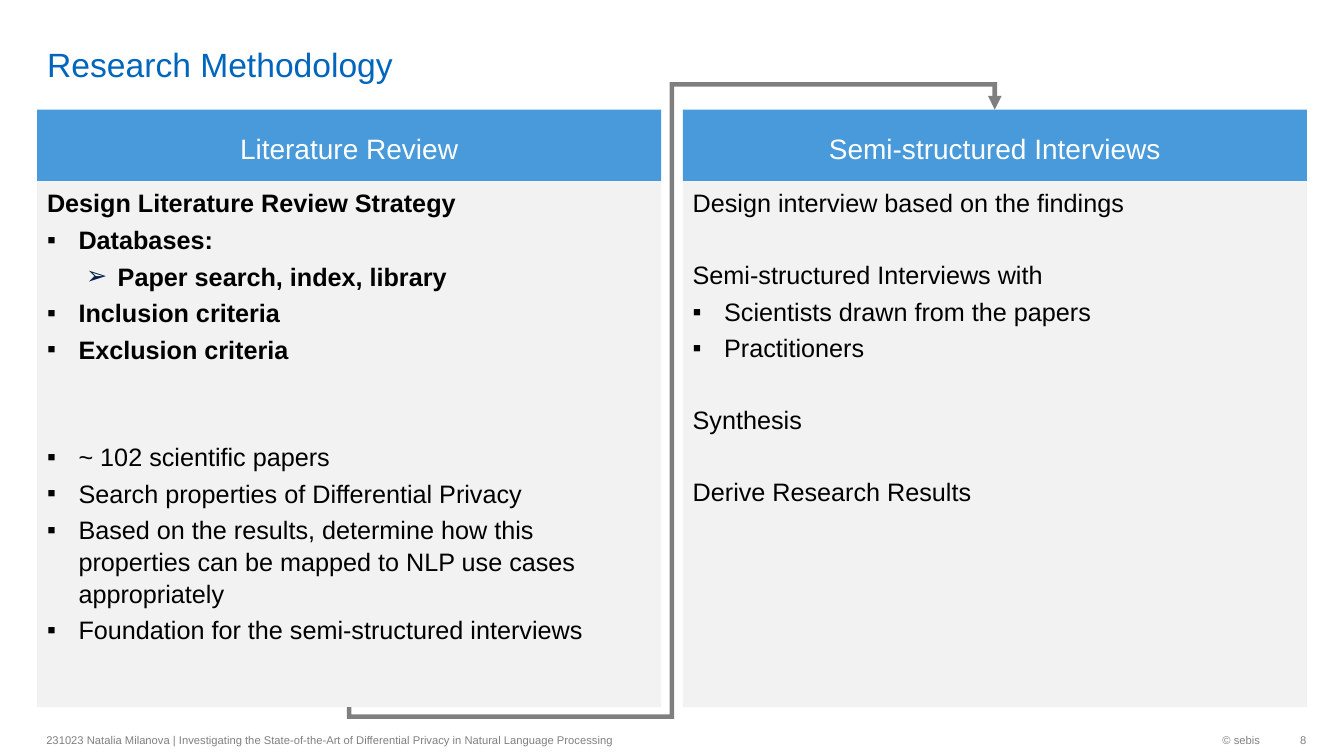
from lxml import etree
from pptx import Presentation
from pptx import util as u
from pptx.dml.color import RGBColor
from pptx.enum import shapes, text
from pptx.oxml.ns import qn

COLORS = {"title": "0065BD", "header": "489ADA", "panel": "F2F2F2", "text": "000000",
          "header text": "FFFFFF", "footer": "808080", "arrow bullet": "002143", "flow": "000000"}
LEFT, CENTER, RIGHT = text.PP_ALIGN.LEFT, text.PP_ALIGN.CENTER, text.PP_ALIGN.RIGHT
TOP, MIDDLE, BOTTOM = text.MSO_ANCHOR.TOP, text.MSO_ANCHOR.MIDDLE, text.MSO_ANCHOR.BOTTOM


class MethodSlide:
    font_name = "Arial"
    line_spacing, space_before = 1.05, 3.5
    line_pitch = 25.2  # one body line with its space before
    bullets = {1: ("▪", 22.5, "text"), 2: ("➢", 50.5, "arrow bullet")}
    hanging = 22.5

    def __init__(self, prs):
        self.slide = prs.slides.add_slide(prs.slide_layouts[5])

    def color(self, name):
        return RGBColor.from_string(COLORS[name])

    def style(self, paragraph, size, color, align=LEFT, bold=False):
        paragraph.alignment = align
        font = paragraph.font
        font.name, font.size, font.bold = self.font_name, u.Pt(size), bold
        font.color.rgb = self.color(color)

    def frame(self, shape, anchor, margins=(7.2, 3.6, 7.2, 3.6)):
        frame = shape.text_frame
        frame.word_wrap, frame.auto_size = True, text.MSO_AUTO_SIZE.NONE
        frame.vertical_anchor = anchor
        (frame.margin_left, frame.margin_top,
         frame.margin_right, frame.margin_bottom) = map(u.Pt, margins)
        return frame

    def title(self, wording, *box):
        title = self.slide.shapes.title
        title.left, title.top, title.width, title.height = map(u.Pt, box)
        paragraph = self.frame(title, BOTTOM, (7.2, 0, 7.2, 0)).paragraphs[0]
        paragraph.text = wording
        self.style(paragraph, 24, "title")

    def block(self, fill, *box):
        block = self.slide.shapes.add_shape(shapes.MSO_SHAPE.RECTANGLE, *map(u.Pt, box))
        block.shadow.inherit = False
        block.fill.solid()
        block.fill.fore_color.rgb = self.color(fill)
        block.line.fill.background()
        return block

    def header(self, wording, *box):
        frame = self.frame(self.block("header", *box), MIDDLE, (7.2, 7.2, 7.2, 3.6))
        paragraph = frame.paragraphs[0]
        paragraph.text = wording
        self.style(paragraph, 20, "header text", CENTER)

    def bullet(self, paragraph, level):
        mark, margin, color = self.bullets[level]
        properties = paragraph._p.get_or_add_pPr()
        properties.set("marL", str(u.Pt(margin)))
        properties.set("indent", str(-u.Pt(self.hanging)))
        bullet_color = etree.SubElement(properties, qn("a:buClr"))
        etree.SubElement(bullet_color, qn("a:srgbClr"), val=COLORS[color])
        etree.SubElement(properties, qn("a:buFont"), typeface=self.font_name)
        etree.SubElement(properties, qn("a:buChar"), char=mark)

    def steps(self, items, *box):
        """Each item: wording, bullet level, bold, lines left free above."""
        frame = self.frame(self.block("panel", *box), TOP)
        for i, (wording, level, bold, gap) in enumerate(items):
            paragraph = frame.add_paragraph() if i else frame.paragraphs[0]
            paragraph.text = wording
            paragraph.line_spacing = self.line_spacing
            if i:
                paragraph.space_before = u.Pt(self.space_before + gap * self.line_pitch)
            if level:
                self.bullet(paragraph, level)
            self.style(paragraph, 18, "text", bold=bold)

    def footer(self, wording, align, right_margin, *box):
        note = self.slide.shapes.add_textbox(*map(u.Pt, box))
        paragraph = self.frame(note, MIDDLE, (7.2, 3.6, right_margin, 3.6)).paragraphs[0]
        paragraph.text = wording
        self.style(paragraph, 8, "footer", align)

    def flow(self, points):
        start, *corners = [(u.Pt(x), u.Pt(y)) for x, y in points]
        builder = self.slide.shapes.build_freeform(*start)
        builder.add_line_segments(corners, close=False)
        flow = builder.convert_to_shape()
        flow.shadow.inherit = False
        flow.fill.background()
        flow.line.width = u.Pt(3.25)
        flow.line.color.rgb = self.color("flow")
        line = flow.line._get_or_add_ln()
        etree.SubElement(line.find(".//" + qn("a:srgbClr")), qn("a:alpha"), val="50000")
        etree.SubElement(line, qn("a:miter"), lim="800000")
        etree.SubElement(line, qn("a:tailEnd"), type="triangle")


def main():
    prs = Presentation()
    prs.slide_width, prs.slide_height = u.Pt(960), u.Pt(540)
    page = MethodSlide(prs)
    page.title("Research Methodology", 26.5, 3.6, 833.8, 56.9)

    # Two phases side by side
    phases = [
        ("Literature Review", [
            ("Design Literature Review Strategy", 0, True, 0),
            ("Databases:", 1, True, 0),
            ("Paper search, index, library", 2, True, 0),
            ("Inclusion criteria", 1, True, 0),
            ("Exclusion criteria", 1, True, 0),
            ("~ 102 scientific papers", 1, False, 2),
            ("Search properties of Differential Privacy", 1, False, 0),
            ("Based on the results, determine how this properties can be mapped "
             "to NLP use cases appropriately", 1, False, 0),
            ("Foundation for the semi-structured interviews", 1, False, 0)]),
        ("Semi-structured Interviews", [
            ("Design interview based on the findings", 0, False, 0),
            ("Semi-structured Interviews with", 0, False, 1),
            ("Scientists drawn from the papers", 1, False, 0),
            ("Practitioners", 1, False, 0),
            ("Synthesis", 0, False, 1),
            ("Derive Research Results", 0, False, 1)]),
    ]
    left, width, gap = 26.5, 445.8, 15.4
    header_top, panel_top, panel_bottom = 78.3, 129.4, 505.2
    for column, (heading, items) in enumerate(phases):
        x = left + column * (width + gap)
        page.header(heading, x, header_top, width, panel_top - header_top)
        page.steps(items, x, panel_top, width, panel_bottom - panel_top)

    # Footer
    page.footer("231023 Natalia Milanova | Investigating the State-of-the-Art of "
                "Differential Privacy in Natural Language Processing",
                LEFT, 7.2, 26, 517.3, 453.6, 23)
    page.footer("© sebis", RIGHT, 7.2, 738.7, 517.3, 168.5, 23)
    page.footer("8", RIGHT, 0, 907.2, 517.3, 26, 23)

    # Arrow from the review to the interviews
    review_x = left + width / 2
    interviews_x = review_x + width + gap
    between_x = left + width + gap / 2
    below, above = panel_bottom + 6.7, header_top - 18
    page.flow([(review_x, panel_bottom), (review_x, below), (between_x, below),
               (between_x, above), (interviews_x, above), (interviews_x, header_top)])

    prs.save("out.pptx")


if __name__ == "__main__":
    main()
